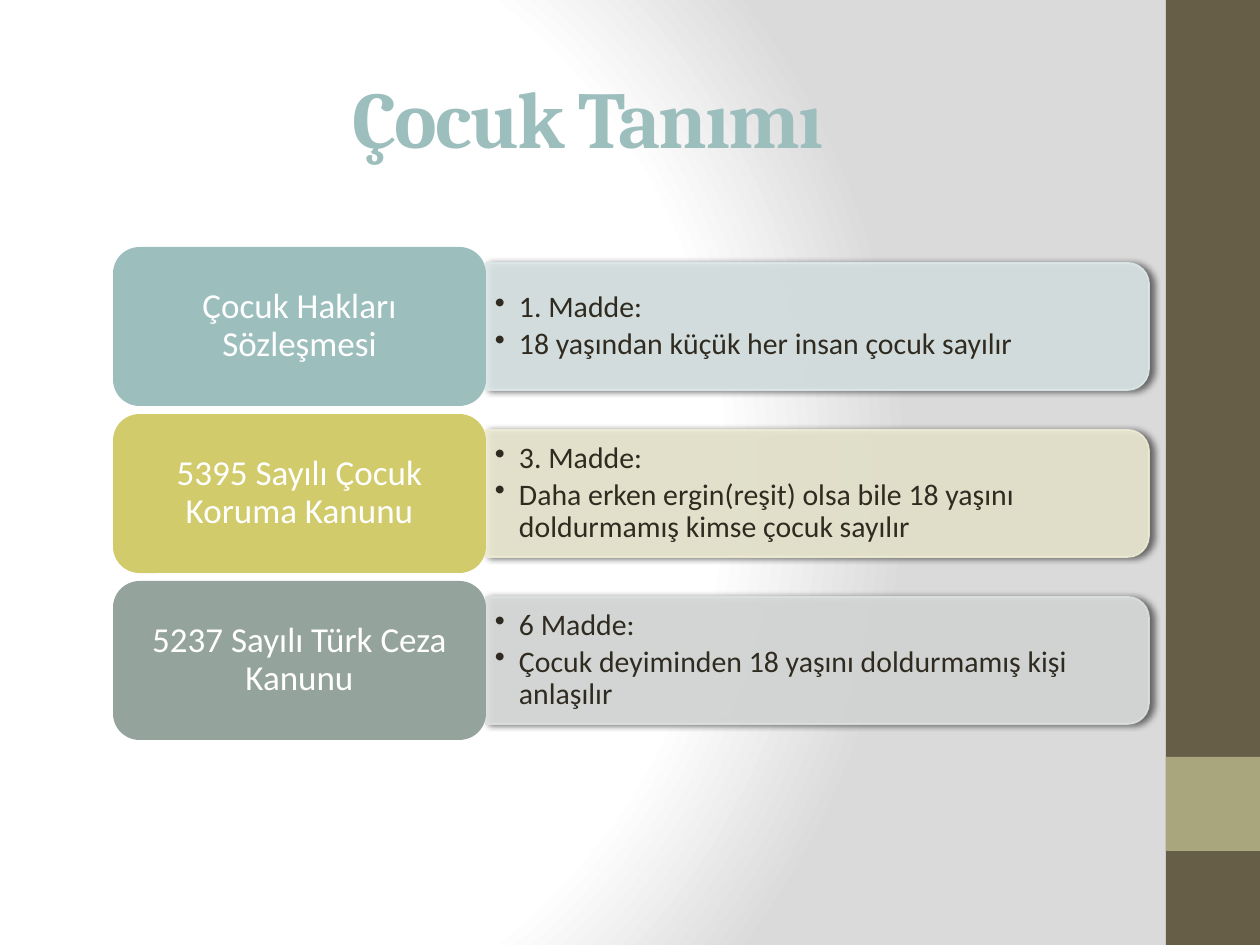
from lxml.etree import fromstring
from pptx import Presentation
from pptx.dml.color import RGBColor
from pptx.enum.shapes import MSO_SHAPE as SHAPE
from pptx.enum.text import MSO_ANCHOR as ANCHOR, PP_ALIGN as ALIGN
from pptx.oxml.ns import qn
from pptx.util import Pt

PX = 914400 // 126
NS = 'xmlns:a="http://schemas.openxmlformats.org/drawingml/2006/main"'
ROWS = [
    ("Çocuk Hakları Sözleşmesi", "9CBEBD", "DEE8E8",
     ["1. Madde:", "18 yaşından küçük her insan çocuk sayılır"]),
    ("5395 Sayılı Çocuk Koruma Kanunu", "D2CB6C", "EEECD4",
     ["3. Madde:", "Daha erken ergin(reşit) olsa bile 18 yaşını doldurmamış kimse çocuk sayılır"]),
    ("5237 Sayılı Türk Ceza Kanunu", "95A39D", "DDE0DF",
     ["6 Madde:", "Çocuk deyiminden 18 yaşını doldurmamış kişi anlaşılır"]),
]


def color(value):
    return RGBColor.from_string(value)


def add_box(s, kind, x, y, w, h, fill):
    sp = s.shapes.add_shape(kind, x * PX, y * PX, w * PX, h * PX)
    sp.shadow.inherit = False
    sp.fill.solid()
    sp.fill.fore_color.rgb = color(fill)
    sp.line.fill.background()
    return sp


def add_textbox(s, x, y, w, h):
    return s.shapes.add_textbox(x * PX, y * PX, w * PX, h * PX)


def set_text(sp, lines, size, hue, font="Calibri", bold=False, align=ALIGN.CENTER,
             inset=(10, 5), line=0.9, after=0, bullet=0, spacing=0):
    tf = sp.text_frame
    tf.word_wrap = True
    tf.vertical_anchor = ANCHOR.MIDDLE
    tf.margin_left = tf.margin_right = inset[0] * PX
    tf.margin_top = tf.margin_bottom = inset[1] * PX
    for i, text in enumerate(lines):
        p = tf.paragraphs[0] if i == 0 else tf.add_paragraph()
        p.alignment, p.line_spacing, p.space_after = align, line, Pt(after)
        if bullet:
            pPr = p._p.get_or_add_pPr()
            pPr.set("marL", str(bullet * PX))
            pPr.set("indent", str(-bullet * PX))
            pPr.append(fromstring(f'<a:buChar {NS} char="•"/>'))
        r = p.add_run()
        r.text = text
        r.font.name, r.font.size, r.font.bold = font, Pt(size), bold
        r.font.color.rgb = color(hue)
        if spacing:
            r._r.get_or_add_rPr().set("spc", str(spacing * 100))


def set_background(s):
    s.background.fill.solid()
    solid = next(s._element.iter(qn("a:solidFill")))
    stops = "".join(f'<a:gs pos="{pos}000"><a:srgbClr val="{hue}"/></a:gs>'
                    for pos, hue in [(0, "FFFFFF"), (75, "FFFFFF"), (100, "DADADA")])
    solid.getparent().replace(solid, fromstring(
        f'<a:gradFill {NS} rotWithShape="1"><a:gsLst>{stops}</a:gsLst><a:path path="circle">'
        '<a:fillToRect l="20000" t="50000" r="100000" b="50000"/></a:path></a:gradFill>'))


def add_sidebar(s, x, y, w, h):
    add_box(s, SHAPE.RECTANGLE, x, y, w, h, "675E47")
    add_box(s, SHAPE.RECTANGLE, x, y + h - 2 * w, w, w, "A9A57C")


def add_panel(s, x, y, w, h, tint):
    # A tall shape turned a quarter, so its two round corners face right
    sp = add_box(s, SHAPE.ROUND_2_SAME_RECTANGLE,
                 x + (w - h) // 2, y + (h - w) // 2, h, w, tint)
    sp.rotation = 90
    sp.line.color.rgb = color(tint)
    sp.line.width = Pt(1)
    spPr = sp._element.spPr
    for clr in spPr.iter(qn("a:srgbClr")):
        clr.append(fromstring(f'<a:alpha {NS} val="90000"/>'))
    spPr.find(qn("a:effectLst")).append(fromstring(
        f'<a:outerShdw {NS} blurRad="{Pt(4)}" dist="{Pt(2)}" dir="0">'
        '<a:srgbClr val="000000"><a:alpha val="60000"/></a:srgbClr></a:outerShdw>'))


def add_row(s, x, y, h, label, fill, tint, points):
    label_w, panel_w, pad = 373, 663, 16
    panel = (x + label_w, y + pad, panel_w, h - 2 * pad)
    add_panel(s, *panel, tint)
    set_text(add_textbox(s, *panel), points, 17, "2F2B20", align=ALIGN.LEFT,
             inset=(9, 5), after=2.5, bullet=24)
    sp = add_box(s, SHAPE.ROUNDED_RECTANGLE, x, y, label_w, h, fill)
    set_text(sp, [label], 20, "FFFFFF")


def main():
    prs = Presentation()
    prs.slide_width, prs.slide_height = 1260 * PX, 945 * PX
    s = prs.slides.add_slide(prs.slide_layouts[6])
    set_background(s)
    add_sidebar(s, 1166, 0, 94, 945)
    # Title
    set_text(add_textbox(s, 63, 38, 1050, 157), ["Çocuk Tanımı"], 46, "9CBEBD",
             font="Cambria", bold=True, line=1, spacing=-1)
    # Definitions, one row for each law
    for i, row in enumerate(ROWS):
        add_row(s, 113, 247 + 167 * i, 159, *row)
    prs.save("out.pptx")


if __name__ == "__main__":
    main()
